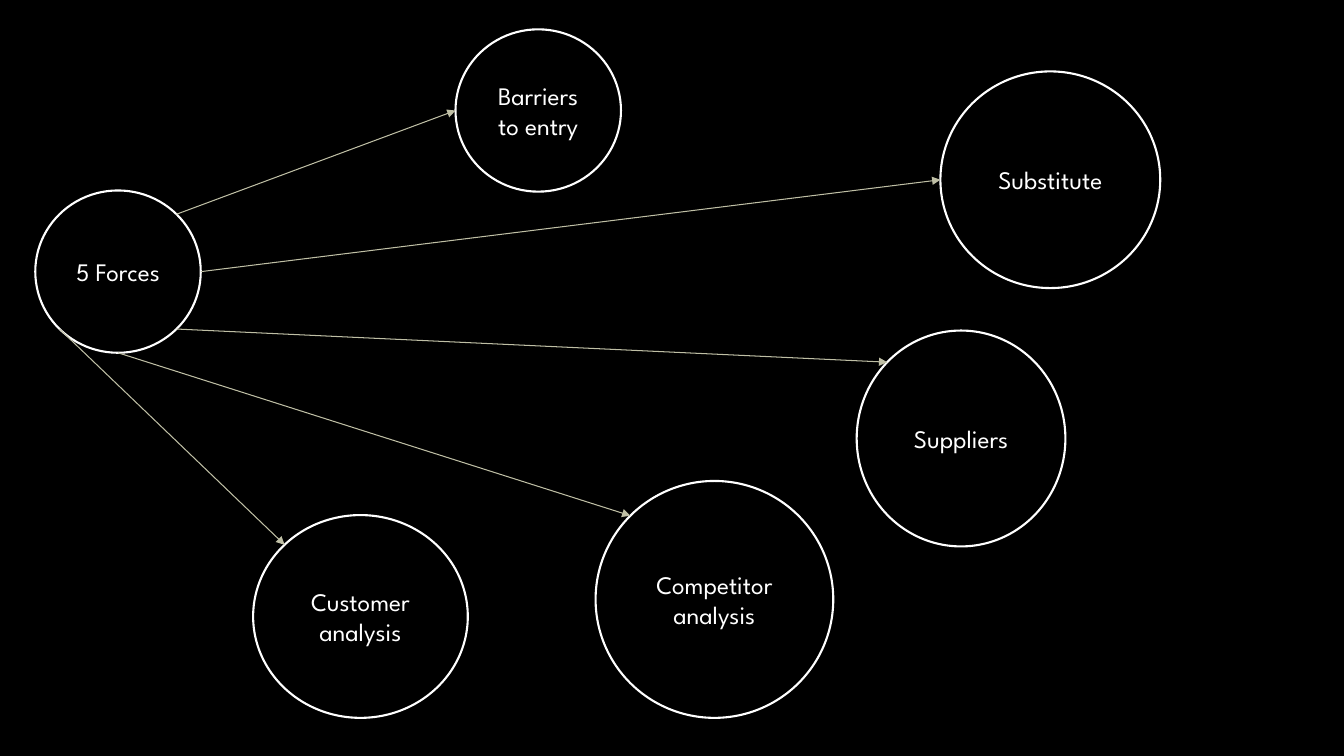
from dataclasses import dataclass
from math import cos, radians, sin

from lxml.etree import SubElement
from pptx import Presentation
from pptx.dml.color import RGBColor
from pptx.enum.shapes import MSO_CONNECTOR, MSO_SHAPE
from pptx.enum.text import MSO_ANCHOR, PP_ALIGN
from pptx.oxml.ns import qn
from pptx.util import Cm, Pt

# Connection sites of an ellipse, counter-clockwise from the top
TOP_LEFT, LEFT, BOTTOM_LEFT, BOTTOM, BOTTOM_RIGHT, RIGHT, TOP_RIGHT = range(1, 8)


@dataclass(frozen=True)
class Theme:
    background: RGBColor = RGBColor(0x00, 0x00, 0x00)
    foreground: RGBColor = RGBColor(0xFF, 0xFF, 0xFF)
    arrow: RGBColor = RGBColor(0xBF, 0xBF, 0xA5)
    font: str = "League Spartan"
    text_size: Pt = Pt(18)
    outline_width: Pt = Pt(1.5)
    arrow_width: Pt = Pt(0.75)


class ForcesDiagram:
    def __init__(self, slide, theme):
        self.slide = slide
        self.theme = theme
        fill = slide.background.fill
        fill.solid()
        fill.fore_color.rgb = theme.background

    def circle(self, label, left, top, width, height):
        circle = self.slide.shapes.add_shape(
            MSO_SHAPE.OVAL, Cm(left), Cm(top), Cm(width), Cm(height))
        circle.shadow.inherit = False
        circle.fill.background()
        circle.line.color.rgb = self.theme.foreground
        circle.line.width = self.theme.outline_width

        frame = circle.text_frame
        frame.word_wrap = True
        frame.vertical_anchor = MSO_ANCHOR.MIDDLE
        paragraph = frame.paragraphs[0]
        paragraph.text = label
        paragraph.alignment = PP_ALIGN.CENTER
        paragraph.font.name = self.theme.font
        paragraph.font.size = self.theme.text_size
        paragraph.font.color.rgb = self.theme.foreground
        return circle

    @staticmethod
    def site_point(circle, site):
        angle = radians(90 + 45 * site)
        x = circle.left + circle.width / 2 * (1 + cos(angle))
        y = circle.top + circle.height / 2 * (1 - sin(angle))
        return round(x), round(y)

    def arrow(self, source, source_site, target, target_site):
        arrow = self.slide.shapes.add_connector(
            MSO_CONNECTOR.STRAIGHT,
            *self.site_point(source, source_site),
            *self.site_point(target, target_site))
        arrow.line.color.rgb = self.theme.arrow
        arrow.line.width = self.theme.arrow_width

        # Arrowhead, and no shadow
        properties = arrow._element.spPr
        SubElement(properties.find(qn("a:ln")), qn("a:tailEnd"), type="triangle")
        SubElement(properties, qn("a:effectLst"))

        # Join both ends: begin_connect only knows the four sites of a rectangle
        joints = arrow._element.find(".//" + qn("p:cNvCxnSpPr"))
        for tag, circle, site in (("a:stCxn", source, source_site),
                                  ("a:endCxn", target, target_site)):
            SubElement(joints, qn(tag), id=str(circle.shape_id), idx=str(site))


def main():
    presentation = Presentation()
    presentation.slide_width = Cm(33.87)
    presentation.slide_height = Cm(19.05)
    slide = presentation.slides.add_slide(presentation.slide_layouts[6])
    diagram = ForcesDiagram(slide, Theme())

    # Central topic and the five forces
    five_forces = diagram.circle("5 Forces", 0.89, 4.8, 4.17, 4.09)
    barriers = diagram.circle("Barriers to entry", 11.48, 0.74, 4.17, 4.09)
    customers = diagram.circle("Customer analysis", 6.38, 12.98, 5.41, 5.11)
    competitors = diagram.circle("Competitor analysis", 15.01, 12.12, 5.99, 5.97)
    suppliers = diagram.circle("Suppliers", 21.59, 8.33, 5.26, 5.44)
    substitute = diagram.circle("Substitute", 23.7, 1.8, 5.54, 5.46)

    # Arrows from the topic to each force
    for topic_site, force, force_site in (
        (TOP_RIGHT, barriers, LEFT),
        (RIGHT, substitute, LEFT),
        (BOTTOM_RIGHT, suppliers, TOP_LEFT),
        (BOTTOM, competitors, TOP_LEFT),
        (BOTTOM_LEFT, customers, TOP_LEFT),
    ):
        diagram.arrow(five_forces, topic_site, force, force_site)

    presentation.save("out.pptx")


if __name__ == "__main__":
    main()
